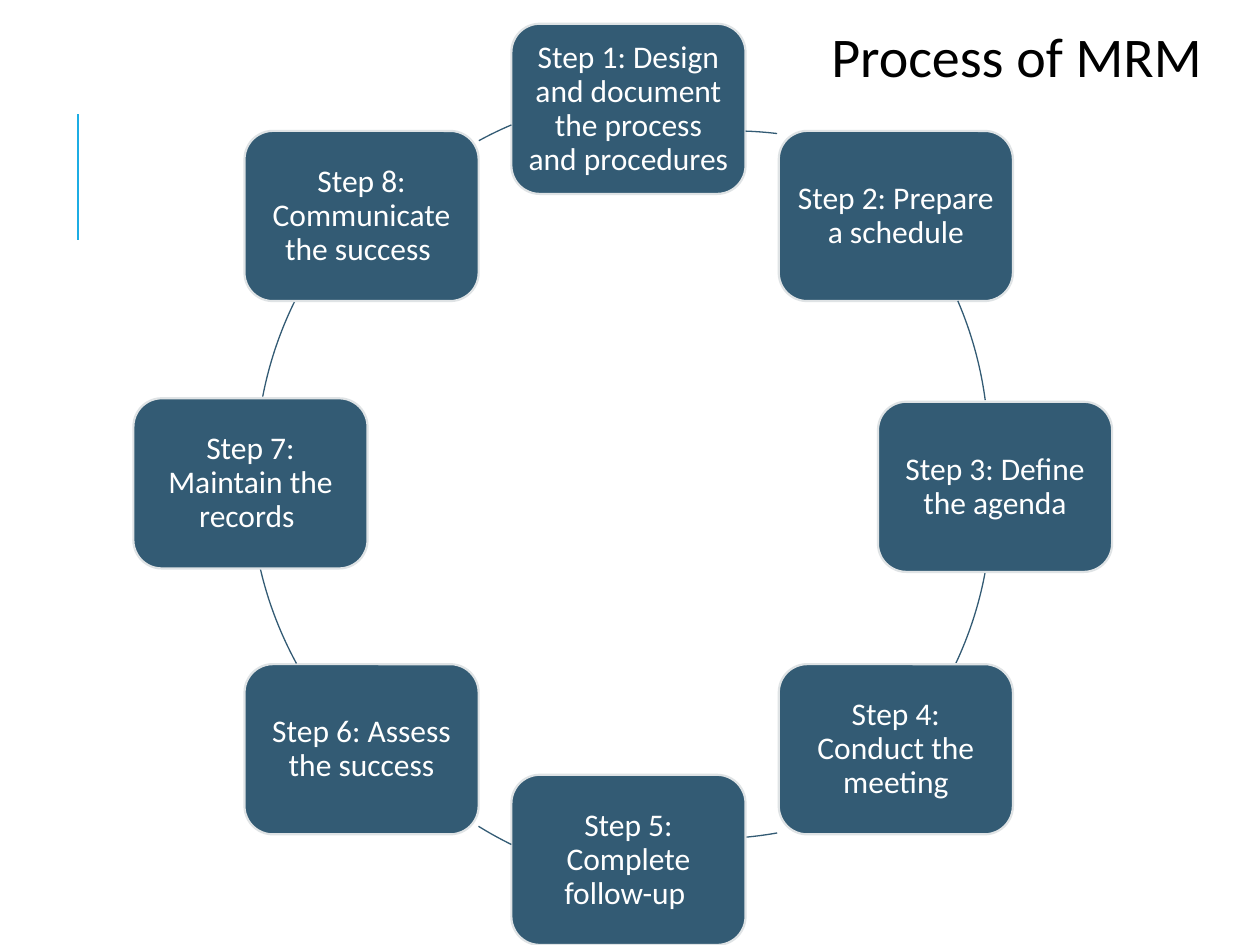
from typing import NamedTuple

from lxml import etree
from pptx import Presentation
from pptx import util as u
from pptx.dml.color import RGBColor
from pptx.enum import shapes, text
from pptx.oxml.ns import qn

COLOURS = {
    "accent": "1CADE4",
    "step": "335B74",
    "step_edge": "DFE3E5",
    "step_text": "FFFFFF",
    "title": "000000",
}
FONT = "Calibri"
STEP_WIDTH, STEP_HEIGHT = 4.72, 3.43
ARC_DIAMETER = 15.21


class Step(NamedTuple):
    """A step box and the arc that leads on from it; lengths in cm."""
    label: str
    left: float
    top: float
    arc_left: float
    arc_top: float
    start_angle: float  # degrees, clockwise from the right
    end_angle: float


STEPS = [
    Step("Design and document the process and procedures",
         10.31, 0.48, 7.16, 2.64, 272, 276.8),
    Step("Prepare a schedule", 15.7, 2.64, 4.72, 1.47, 336.7, 352.4),
    Step("Define the agenda", 17.7, 8.1, 4.78, 2.54, 10.7, 25.2),
    Step("Conduct the meeting", 15.7, 13.39, 6.73, 1.7, 79.9, 84.7),
    Step("Complete follow-up ", 10.31, 15.62, 6.05, 2.59, 116.1, 121.8),
    Step("Assess the success", 4.93, 13.39, 5.05, 2.13, 151.4, 167),
    Step("Maintain the records ", 2.69, 8.03, 5.16, 1.83, 190.9, 206.2),
    Step("Communicate the success ", 4.93, 2.64, 5.69, 1.91, 241.4, 246.9),
]


def colour(name: str) -> RGBColor:
    return RGBColor.from_string(COLOURS[name])


def apply_format(target, values: dict) -> None:
    for name, value in values.items():
        setattr(target, name, value)


def set_line(shape, colour_name: str, width: float) -> None:
    shape.line.color.rgb = colour(colour_name)
    shape.line.width = u.Pt(width)


def write_text(shape, content: str, size: float, colour_name: str,
               line_spacing: float = 1.0) -> None:
    shape.text_frame.word_wrap = True
    paragraph = shape.text_frame.paragraphs[0]
    apply_format(paragraph, {"alignment": text.PP_ALIGN.CENTER,
                             "line_spacing": line_spacing})
    run = paragraph.add_run()
    run.text = content
    apply_format(run.font, {"name": FONT, "size": u.Pt(size)})
    run.font.color.rgb = colour(colour_name)


def draw_accent(slide) -> None:
    accent = slide.shapes.add_connector(
        shapes.MSO_CONNECTOR.STRAIGHT,
        u.Cm(1.57), u.Cm(4.83), u.Cm(1.57), u.Cm(2.29))
    set_line(accent, "accent", 1.5)
    etree.SubElement(accent._element.spPr, qn("a:effectLst"))


def draw_step(slide, number: int, step: Step) -> None:
    box = slide.shapes.add_shape(
        shapes.MSO_SHAPE.ROUNDED_RECTANGLE, u.Cm(step.left), u.Cm(step.top),
        u.Cm(STEP_WIDTH), u.Cm(STEP_HEIGHT))
    box.shadow.inherit = False
    box.fill.solid()
    box.fill.fore_color.rgb = colour("step")
    set_line(box, "step_edge", 1.25)
    margins = ("margin_left", "margin_top", "margin_right", "margin_bottom")
    apply_format(box.text_frame, dict.fromkeys(margins, u.Cm(0.18)))
    box.text_frame.vertical_anchor = text.MSO_ANCHOR.MIDDLE
    write_text(box, f"Step {number}: {step.label}", 18, "step_text", 0.9)


def draw_arc(slide, step: Step) -> None:
    arc = slide.shapes.add_shape(
        shapes.MSO_SHAPE.ARC, u.Cm(step.arc_left), u.Cm(step.arc_top),
        u.Cm(ARC_DIAMETER), u.Cm(ARC_DIAMETER))
    arc.shadow.inherit = False
    arc.fill.background()
    set_line(arc, "step", 0.75)
    # Angles are stored in 1/60000 degree, adjustments in 1/100000.
    for index, angle in enumerate((step.start_angle, step.end_angle)):
        arc.adjustments[index] = angle * 0.6


def draw_title(slide) -> None:
    title = slide.shapes.add_textbox(
        u.Cm(15.85), u.Cm(0.3), u.Cm(9.55), u.Cm(1.62))
    write_text(title, "Process of MRM ", 32, "title")
    title.text_frame.auto_size = text.MSO_AUTO_SIZE.SHAPE_TO_FIT_TEXT


def main() -> None:
    presentation = Presentation()
    apply_format(presentation, {"slide_width": u.Cm(25.4),
                                "slide_height": u.Cm(19.05)})
    slide = presentation.slides.add_slide(presentation.slide_layouts[6])
    draw_accent(slide)
    for number, step in enumerate(STEPS, start=1):
        draw_step(slide, number, step)
        draw_arc(slide, step)
    draw_title(slide)
    presentation.save("out.pptx")


if __name__ == "__main__":
    main()
